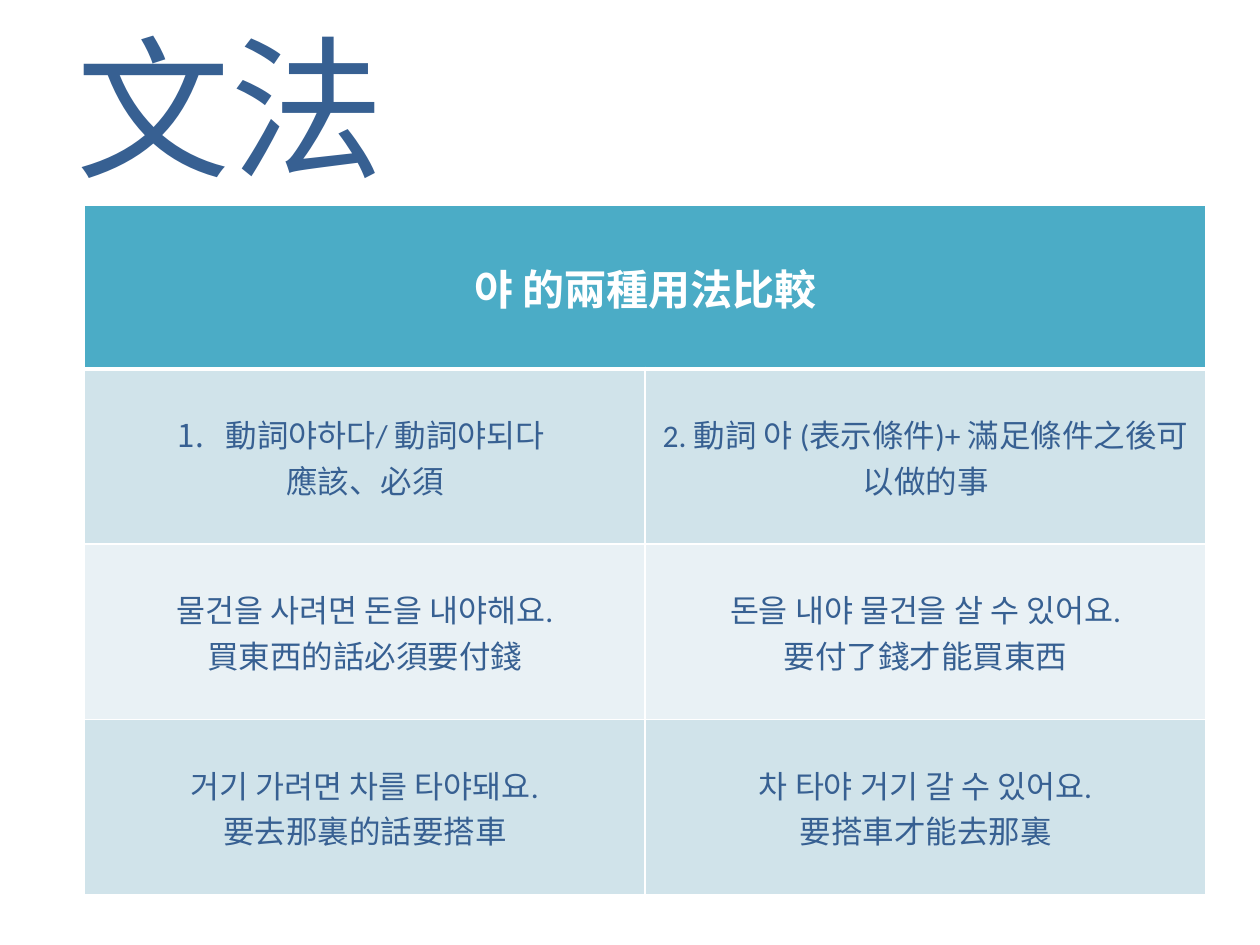
from lxml import etree
from pptx import Presentation
from pptx.dml.color import RGBColor
from pptx.enum.text import MSO_ANCHOR, MSO_AUTO_SIZE, PP_ALIGN
from pptx.oxml.ns import qn
from pptx.util import Inches, Pt

LEFT, CENTER = PP_ALIGN.LEFT, PP_ALIGN.CENTER
TOP, MIDDLE = MSO_ANCHOR.TOP, MSO_ANCHOR.MIDDLE
GROW = MSO_AUTO_SIZE.SHAPE_TO_FIT_TEXT
WHITE, BLUE, TEAL = "FFFFFF", "376092", "4BACC6"
BANDS = ["D0E3EA", "E9F1F5"]
CJK = "Noto Sans CJK JP"
HEAD = "야 的兩種用法比較"
BODY = [
    ["動詞야하다/ 動詞야되다 \n應該、必須",
     "2. 動詞 야 (表示條件)+ 滿足條件之後可以做的事"],
    ["물건을 사려면 돈을 내야해요.\n買東西的話必須要付錢",
     "돈을 내야 물건을 살 수 있어요.\n要付了錢才能買東西"],
    ["거기 가려면 차를 타야돼요.\n要去那裏的話要搭車",
     "차 타야 거기 갈 수 있어요.\n要搭車才能去那裏"],
]


def color(code):
    """Turn a hex string into a colour."""
    return RGBColor.from_string(code)


def write(frame, text, size=18, tint=BLUE, font="Calibri", bold=False, align=CENTER):
    """Fill a text frame, one paragraph for each line."""
    frame.text = text
    for para in frame.paragraphs:
        para.alignment = align
        for run in para.runs:
            face = run.font
            face.size, face.bold, face.name = Pt(size), bold, font
            face.color.rgb = color(tint)
            etree.SubElement(run._r.get_or_add_rPr(), qn("a:ea"), typeface=CJK)


def number(frame):
    """Number the first paragraph and hang all of them alike."""
    for para in frame.paragraphs:
        props = para._p.get_or_add_pPr()
        props.set("marL", str(Inches(0.38)))
        props.set("indent", str(-Inches(0.38)))
    first = frame.paragraphs[0]._p.get_or_add_pPr()
    etree.SubElement(first, qn("a:buFont"), typeface="+mj-lt")
    etree.SubElement(first, qn("a:buAutoNum"), type="arabicPeriod")


def paint(cell, fill, base=1):
    """Give a cell white borders, a fill and a middle anchor."""
    props = cell._tc.get_or_add_tcPr()
    for side, width in zip("LRTB", (1, 1, 1, base)):
        line = etree.SubElement(props, qn("a:ln" + side), w=str(Pt(width)))
        solid = etree.SubElement(line, qn("a:solidFill"))
        etree.SubElement(solid, qn("a:srgbClr"), val=WHITE)
    cell.fill.solid()
    cell.fill.fore_color.rgb = color(fill)
    cell.vertical_anchor = MIDDLE


def add_title(slide, box):
    """Place the large title in its box."""
    title = slide.shapes.title
    title.left, title.top, title.width, title.height = box
    frame = title.text_frame
    write(frame, "文法", size=88, font=CJK, align=LEFT)
    frame.vertical_anchor, frame.word_wrap, frame.auto_size = TOP, False, GROW


def add_usage(slide, box):
    """Place the table that compares the two usages."""
    high = box[3]
    table = slide.shapes.add_table(len(BODY) + 1, 2, *box).table
    top = int(high * 0.2375)
    table.rows[0].height = top
    for cell in table.rows[0].cells:
        paint(cell, TEAL, base=3)
    table.cell(0, 0).merge(table.cell(0, 1))
    write(table.cell(0, 0).text_frame, HEAD, size=24, tint=WHITE, bold=True)
    for row, texts in enumerate(BODY, 1):
        table.rows[row].height = (high - top) // len(BODY)
        for col, text in enumerate(texts):
            cell = table.cell(row, col)
            paint(cell, BANDS[(row - 1) % 2])
            write(cell.text_frame, text)
    number(table.cell(1, 0).text_frame)


def main():
    """Build and save the slide."""
    deck = Presentation()
    deck.slide_width, deck.slide_height = Inches(10), Inches(7.5)
    wide, high = deck.slide_width, deck.slide_height

    def share(left, top, width, height):
        """Turn shares of the slide into lengths."""
        return int(left * wide), int(top * high), int(width * wide), int(height * high)

    slide = deck.slides.add_slide(deck.slide_layouts[5])
    add_usage(slide, share(0.067, 0.217, 0.89, 0.73))
    add_title(slide, share(0.051, 0.007, 0.267, 0.21))
    deck.save("out.pptx")


if __name__ == "__main__":
    main()
